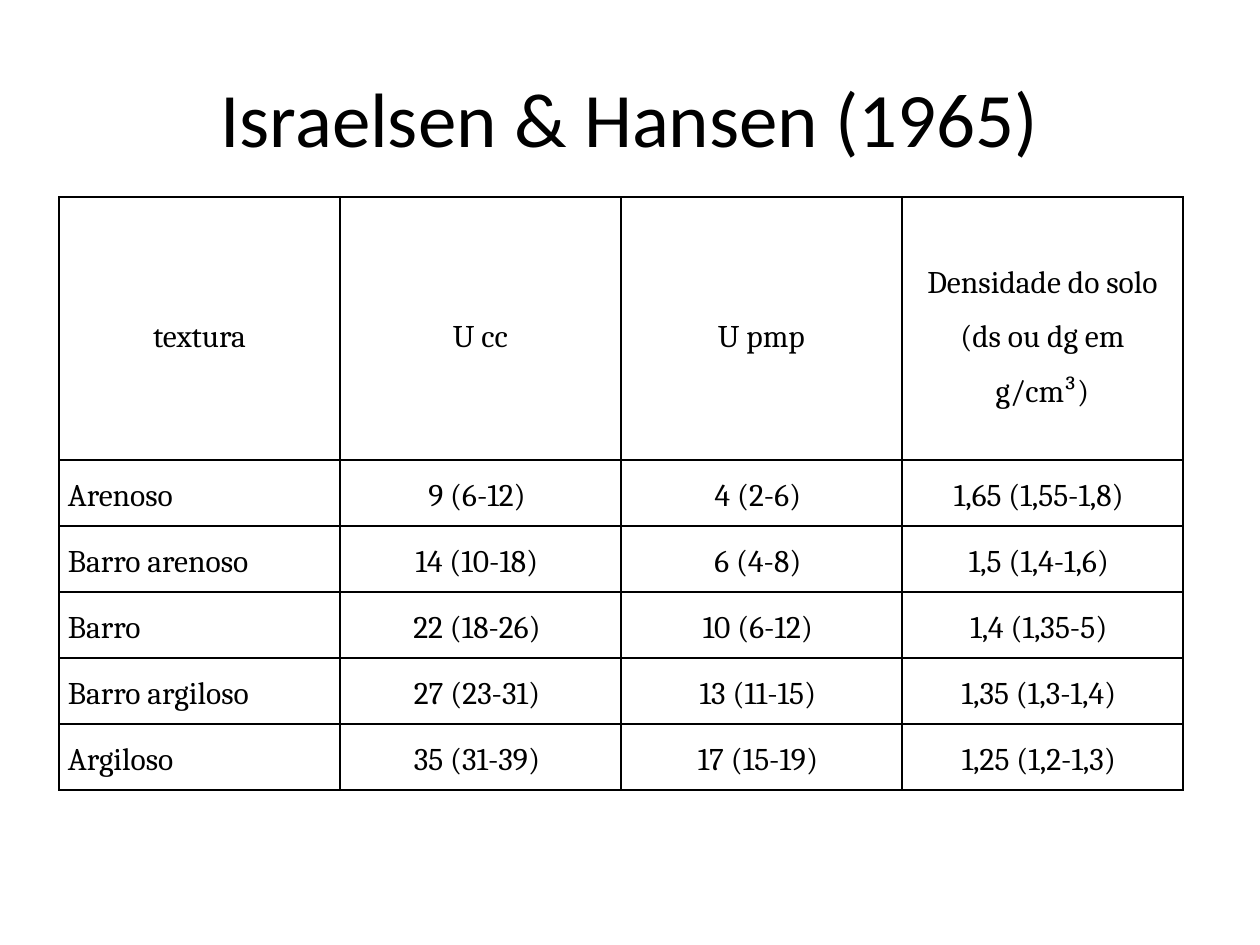
from lxml.etree import SubElement as Sub
from pptx import Presentation
from pptx.dml.color import RGBColor
from pptx.enum.text import MSO_ANCHOR as Anchor, PP_ALIGN as Align
from pptx.oxml.ns import qn
from pptx.util import Emu, Pt

BLACK = RGBColor(0x00, 0x00, 0x00)
SCALE = 914400 / 126


def px(n):
    return Emu(round(n * SCALE))


def style(para, name, size, align):
    para.alignment = align
    for run in para.runs:
        for key, val in {"name": name, "size": Pt(size), "bold": False}.items():
            setattr(run.font, key, val)
        run.font.color.rgb = BLACK


deck = Presentation()
deck.slide_width, deck.slide_height = px(1260), px(945)
slide = deck.slides.add_slide(deck.slide_layouts[5])

title = slide.shapes.title
for key, val in {"left": 63, "top": 38, "width": 1134, "height": 157}.items():
    setattr(title, key, px(val))
title.text_frame.text = "Israelsen & Hansen (1965)"
title.text_frame.vertical_anchor = Anchor.MIDDLE
style(title.text_frame.paragraphs[0], "Calibri", 44, Align.CENTER)

DATA = [
    ("textura", "U cc", "U pmp", "Densidade do solo (ds ou dg em g/cm³)"),
    ("Arenoso", "9 (6-12) ", "4 (2-6) ", "1,65 (1,55-1,8) "),
    ("Barro arenoso", "14 (10-18) ", "6 (4-8) ", "1,5 (1,4-1,6) "),
    ("Barro", "22 (18-26) ", "10 (6-12) ", "1,4 (1,35-5) "),
    ("Barro argiloso", "27 (23-31) ", "13 (11-15) ", "1,35 (1,3-1,4) "),
    ("Argiloso", "35 (31-39) ", "17 (15-19) ", "1,25 (1,2-1,3) "),
]
HEAD, ROW, COL = 263, 66, 281
PAD = {"margin_left": px(9), "margin_right": px(9), "margin_top": 0, "margin_bottom": 0}

frame = slide.shapes.add_table(6, 4, px(59), px(197), px(4 * COL), px(HEAD + 5 * ROW))
table = frame.table
for key in ("first_row", "horz_banding"):
    setattr(table, key, False)
for col in table.columns:
    col.width = px(COL)

for r, line in enumerate(DATA):
    table.rows[r].height = px(ROW if r else HEAD)
    for c, text in enumerate(line):
        cell = table.cell(r, c)
        cell.text = text
        for key, val in PAD.items():
            setattr(cell, key, val)
        cell.vertical_anchor = Anchor.TOP if r else Anchor.MIDDLE
        para = cell.text_frame.paragraphs[0]
        para.line_spacing = 1.5
        style(para, "Cambria", 18, Align.LEFT if r and not c else Align.CENTER)
        props = cell._tc.get_or_add_tcPr()
        for side in "LRTB":
            edge = Sub(props, qn(f"a:ln{side}"), w=str(Pt(1)))
            fill = Sub(edge, qn("a:solidFill"))
            Sub(fill, qn("a:srgbClr"), val=str(BLACK))
        cell.fill.background()

deck.save("out.pptx")
